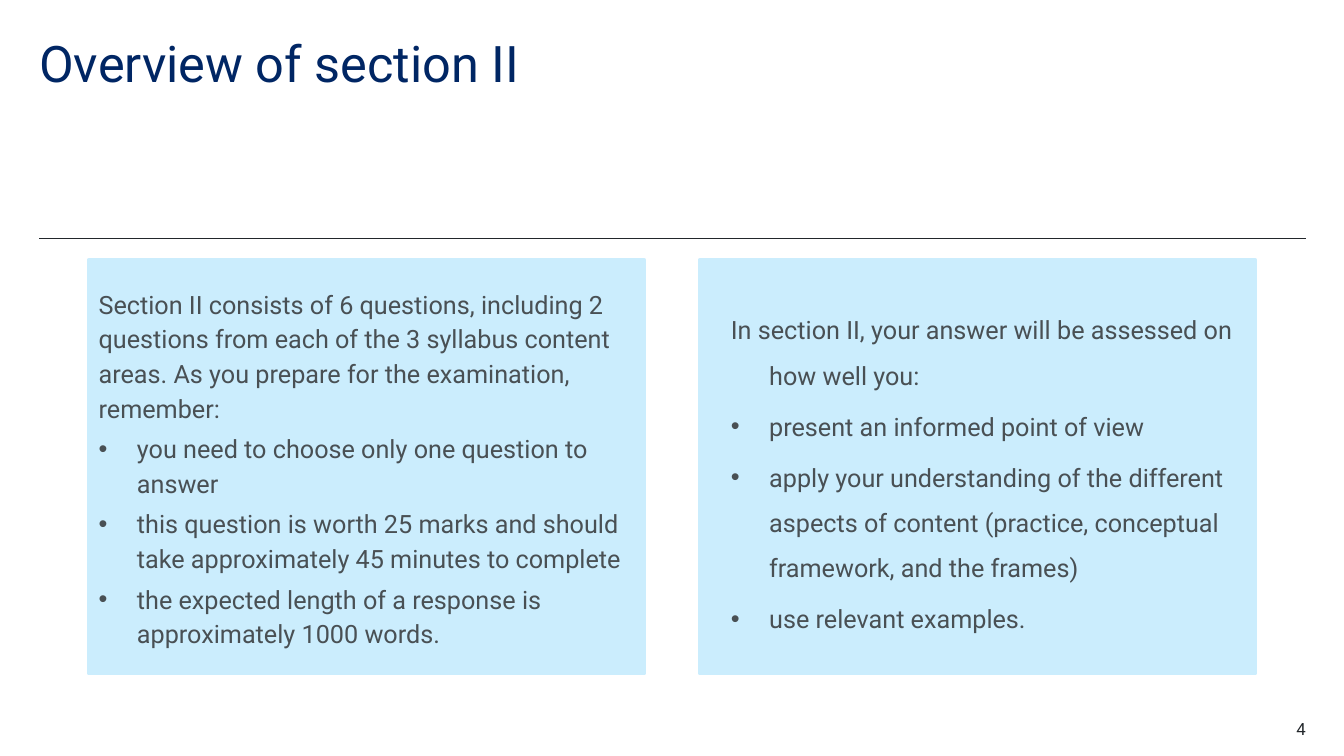
from lxml import etree
from pptx import Presentation
from pptx.dml.color import RGBColor
from pptx.enum.shapes import MSO_CONNECTOR, MSO_SHAPE
from pptx.enum.text import MSO_ANCHOR, PP_ALIGN
from pptx.oxml.ns import qn
from pptx.util import Inches, Pt

RECTANGLE = MSO_SHAPE.RECTANGLE
STRAIGHT = MSO_CONNECTOR.STRAIGHT
MIDDLE = MSO_ANCHOR.MIDDLE
LEFT, RIGHT = PP_ALIGN.LEFT, PP_ALIGN.RIGHT

FONT = "Roboto"
NAVY, INK, GREY, PALE_BLUE = "002664", "22272B", "495054", "CBEDFD"

WIDTH, HEIGHT = 13.33, 7.5
MARGIN = 0.39
RIGHT_EDGE = 12.95
RULE_Y = 2.36
PANEL_LEFT, PANEL_TOP = 0.88, 2.58
PANEL_WIDTH, PANEL_HEIGHT = 5.51, 4.1
PANEL_STEP = PANEL_WIDTH + 0.55
HANGING = 0.38

# Each panel: line spacing, intro indent, bullet indent, intro hanging, intro, bullets
PANELS = [
    (1.15, 0, HANGING, 0,
     "Section II consists of 6 questions, including 2 questions from each of "
     "the 3 syllabus content areas. As you prepare for the examination, remember:",
     ["you need to choose only one question to answer",
      "this question is worth 25 marks and should take approximately "
      "45 minutes to complete",
      "the expected length of a response is approximately 1000 words."]),
    (1.5, 0.59, 0.59, HANGING,
     "In section II, your answer will be assessed on how well you:",
     ["present an informed point of view",
      "apply your understanding of the different aspects of content "
      "(practice, conceptual framework, and the frames)",
      "use relevant examples."]),
]


def color(hex_string):
    return RGBColor.from_string(hex_string)


def write(paragraph, text, size, hex_string, alignment=LEFT):
    paragraph.text = text
    paragraph.alignment = alignment
    paragraph.font.name = FONT
    paragraph.font.size = Pt(size)
    paragraph.font.color.rgb = color(hex_string)


presentation = Presentation()
presentation.slide_width = Inches(WIDTH)
presentation.slide_height = Inches(HEIGHT)
slide = presentation.slides.add_slide(presentation.slide_layouts[6])

# Rule under the title
rule = slide.shapes.add_connector(
    STRAIGHT, Inches(MARGIN), Inches(RULE_Y), Inches(RIGHT_EDGE), Inches(RULE_Y))
rule.line.color.rgb = color(INK)
rule.line.width = Pt(0.5)
etree.SubElement(rule._element.spPr, qn("a:effectLst"))

# Title and page number
for text, left, top, width, height, size, hex_string, alignment, spacing in [
    ("Overview of section II", MARGIN, MARGIN, 11.02, 1.1, 36, NAVY, LEFT, 0.9),
    ("4", RIGHT_EDGE - 0.79, 7.13, 0.79, 0.2, 12, INK, RIGHT, 1.0),
]:
    box = slide.shapes.add_textbox(
        Inches(left), Inches(top), Inches(width), Inches(height))
    frame = box.text_frame
    frame.word_wrap = True
    frame.margin_left = frame.margin_right = 0
    frame.margin_top = frame.margin_bottom = 0
    write(frame.paragraphs[0], text, size, hex_string, alignment)
    frame.paragraphs[0].line_spacing = spacing

# Two panels side by side
for column, panel_content in enumerate(PANELS):
    spacing, intro_indent, bullet_indent, intro_hanging, intro, bullets = panel_content
    panel = slide.shapes.add_shape(
        RECTANGLE, Inches(PANEL_LEFT + column * PANEL_STEP), Inches(PANEL_TOP),
        Inches(PANEL_WIDTH), Inches(PANEL_HEIGHT))
    panel.shadow.inherit = False
    panel.fill.solid()
    panel.fill.fore_color.rgb = color(PALE_BLUE)
    panel.line.color.rgb = color(PALE_BLUE)
    panel.line.width = Pt(3)
    frame = panel.text_frame
    frame.word_wrap = True
    frame.vertical_anchor = MIDDLE

    for index, text in enumerate([intro] + bullets):
        is_bullet = index > 0
        paragraph = frame.add_paragraph() if is_bullet else frame.paragraphs[0]
        paragraph.line_spacing = spacing
        indent = bullet_indent if is_bullet else intro_indent
        hanging = HANGING if is_bullet else intro_hanging
        properties = paragraph._p.get_or_add_pPr()
        properties.set("marL", str(Inches(indent)))
        properties.set("indent", str(-Inches(hanging)))
        if is_bullet:
            paragraph.space_before = Pt(4)
            etree.SubElement(properties, qn("a:buFont"), typeface="Arial")
            etree.SubElement(properties, qn("a:buChar"), char="•")
        write(paragraph, text, 18, GREY)

presentation.save("out.pptx")
